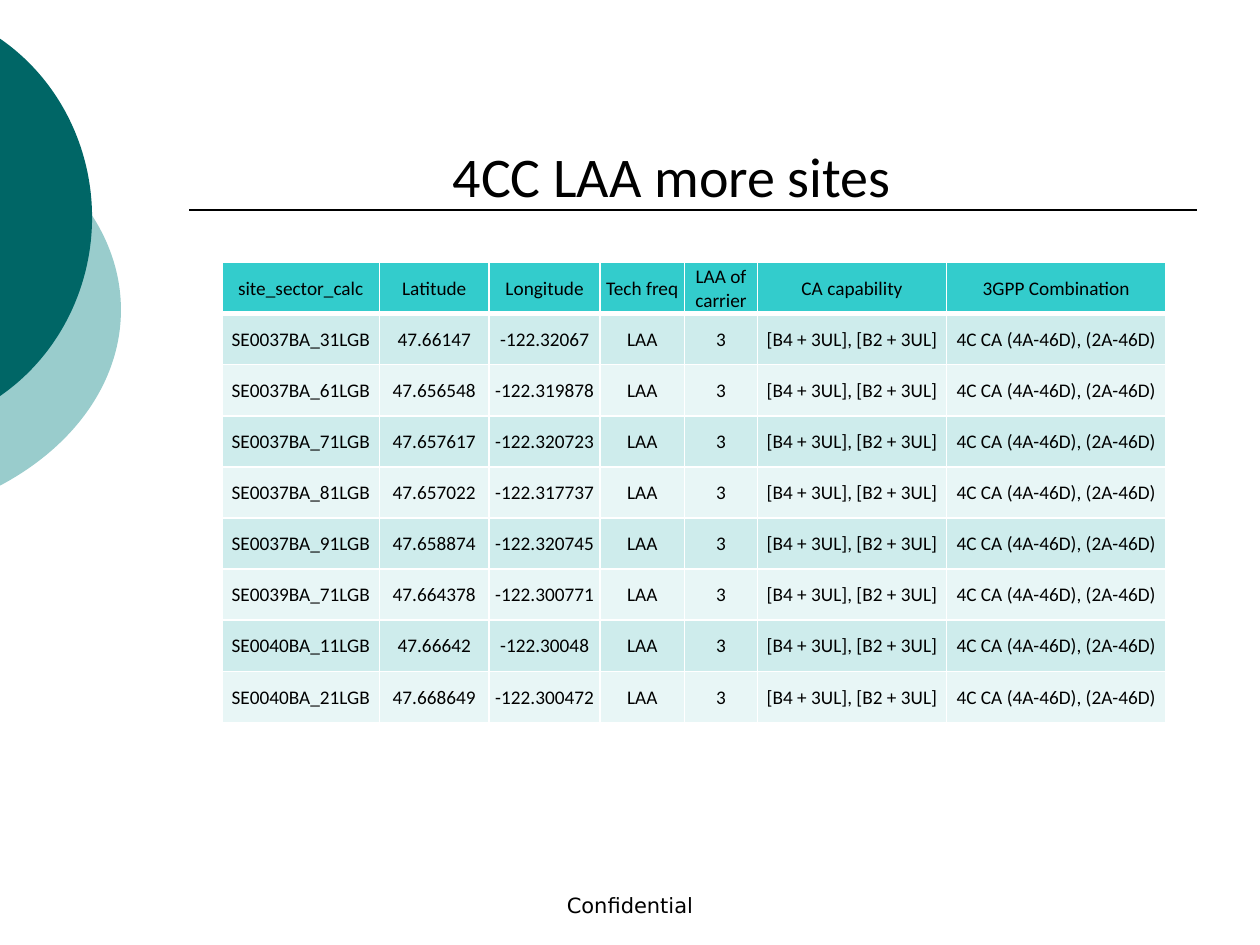
import pptx
import pptx.dml.color
import pptx.enum.shapes
import pptx.enum.text
import pptx.oxml
import pptx.oxml.ns
import pptx.util

Pt = pptx.util.Pt
RGBColor = pptx.dml.color.RGBColor
Anchor = pptx.enum.text.MSO_ANCHOR
Align = pptx.enum.text.PP_ALIGN

BLACK = RGBColor(0x00, 0x00, 0x00)
WHITE = RGBColor(0xFF, 0xFF, 0xFF)
DARK_TEAL = RGBColor(0x00, 0x66, 0x66)
PALE_TEAL = RGBColor(0x99, 0xCC, 0xCC)
HEADER_FILL = RGBColor(0x33, 0xCC, 0xCC)
BAND_FILLS = [RGBColor(0xCE, 0xEC, 0xEC), RGBColor(0xE8, 0xF6, 0xF6)]

TITLE_FONT = {"name": "Calibri", "size": Pt(32), "bold": False}
FOOTER_FONT = {"name": "DejaVu Sans", "size": Pt(12), "bold": False}
TABLE_FONT = {"name": "Calibri", "size": Pt(11), "bold": False}
BOX_FORMAT = {
    "word_wrap": True,
    "auto_size": pptx.enum.text.MSO_AUTO_SIZE.NONE,
    "vertical_anchor": Anchor.BOTTOM,
}
CELL_FORMAT = {
    "margin_left": Pt(0.7),
    "margin_right": Pt(0.7),
    "margin_top": Pt(0.7),
    "margin_bottom": Pt(0),
    "vertical_anchor": Anchor.MIDDLE,
}

COLUMN_WIDTHS = [89.8, 62.8, 63.4, 48.2, 41.8, 108, 125.3]
ROW_HEIGHT = 29.2
HEADERS = ["site_sector_calc", "Latitude", "Longitude", "Tech freq",
           "LAA of carrier", "CA capability", "3GPP Combination"]
SITES = [
    ("SE0037BA_31LGB", "47.66147", "-122.32067"),
    ("SE0037BA_61LGB", "47.656548", "-122.319878"),
    ("SE0037BA_71LGB", "47.657617", "-122.320723"),
    ("SE0037BA_81LGB", "47.657022", "-122.317737"),
    ("SE0037BA_91LGB", "47.658874", "-122.320745"),
    ("SE0039BA_71LGB", "47.664378", "-122.300771"),
    ("SE0040BA_11LGB", "47.66642", "-122.30048"),
    ("SE0040BA_21LGB", "47.668649", "-122.300472"),
]
SHARED_VALUES = ("LAA", "3", "[B4 + 3UL], [B2 + 3UL]", "4C CA (4A-46D), (2A-46D)")


def apply_format(target, values):
    for name, value in values.items():
        setattr(target, name, value)


def write_text(text_frame, text, font_format):
    text_frame.text = text
    paragraph = text_frame.paragraphs[0]
    paragraph.alignment = Align.CENTER
    font = paragraph.runs[0].font
    apply_format(font, font_format)
    font.color.rgb = BLACK


def fill_box(shape, position, text, font_format):
    apply_format(shape, dict(zip(("left", "top", "width", "height"), map(Pt, position))))
    apply_format(shape.text_frame, BOX_FORMAT)
    write_text(shape.text_frame, text, font_format)


def path_command(name, points, left, top):
    marks = "".join(f'<a:pt x="{Pt(x - left)}" y="{Pt(y - top)}"/>' for x, y in points)
    return pptx.oxml.parse_xml(
        f'<a:{name} {pptx.oxml.ns.nsdecls("a")}>{marks}</a:{name}>')


def add_disc_edge(slide, frame, upper, color):
    left, top, width, height = frame
    builder = slide.shapes.build_freeform(Pt(left), Pt(top))
    builder.add_line_segments([(Pt(left + width), Pt(top + height))], close=True)
    shape = builder.convert_to_shape()
    middle = upper[-1][1]
    lower = [(x, 2 * middle - y) for x, y in reversed(upper[:-1])]
    path = shape._element.spPr.find(".//" + pptx.oxml.ns.qn("a:path"))
    path[:] = [
        path_command("moveTo", upper[:1], left, top),
        path_command("cubicBezTo", upper[1:], left, top),
        path_command("cubicBezTo", lower, left, top),
        path_command("close", [], left, top),
    ]
    shape.shadow.inherit = False
    shape.fill.solid()
    shape.fill.fore_color.rgb = color
    shape.line.fill.background()


def add_rule(slide, left, right, top):
    connector = slide.shapes.add_connector(
        pptx.enum.shapes.MSO_CONNECTOR.STRAIGHT, Pt(left), Pt(top), Pt(right), Pt(top))
    connector.line.color.rgb = BLACK
    connector.line.width = Pt(1)
    connector._element.spPr.append(pptx.oxml.parse_xml(
        f'<a:effectLst {pptx.oxml.ns.nsdecls("a")}/>'))


def add_borders(cell, widths):
    properties = cell._tc.get_or_add_tcPr()
    for side, width in widths.items():
        properties.append(pptx.oxml.parse_xml(
            f'<a:ln{side} {pptx.oxml.ns.nsdecls("a")} w="{Pt(width)}">'
            f'<a:solidFill><a:srgbClr val="{WHITE}"/></a:solidFill></a:ln{side}>'))


def add_site_table(slide, left, top):
    rows = [HEADERS] + [site + SHARED_VALUES for site in SITES]
    table = slide.shapes.add_table(
        len(rows), len(HEADERS), Pt(left), Pt(top),
        Pt(sum(COLUMN_WIDTHS)), Pt(ROW_HEIGHT * len(rows))).table
    for column, width in zip(table.columns, COLUMN_WIDTHS):
        column.width = Pt(width)
    for row_index, values in enumerate(rows):
        table.rows[row_index].height = Pt(ROW_HEIGHT)
        fill = BAND_FILLS[(row_index - 1) % 2] if row_index else HEADER_FILL
        borders = {"L": 1, "R": 1,
                   "T": 3 if row_index == 1 else 1,
                   "B": 3 if row_index == 0 else 1}
        for column_index, value in enumerate(values):
            cell = table.cell(row_index, column_index)
            apply_format(cell, CELL_FORMAT)
            add_borders(cell, borders)
            cell.fill.solid()
            cell.fill.fore_color.rgb = fill
            write_text(cell.text_frame, value, TABLE_FONT)


def main():
    presentation = pptx.Presentation()
    presentation.slide_width = Pt(720)
    presentation.slide_height = Pt(540)
    slide = presentation.slides.add_slide(presentation.slide_layouts[5])

    add_disc_edge(slide, (-254.9, 54, 324, 246.2),
                  [(-0.7, 76.3), (43.2, 99.4), (69.1, 136.8), (69.1, 177.1)], PALE_TEAL)
    add_disc_edge(slide, (-190.8, 0, 243.4, 248.4),
                  [(-0.7, 21.6), (33.1, 44.6), (52.6, 83.5), (52.6, 124.2)], DARK_TEAL)
    add_rule(slide, 108, 684, 120)
    fill_box(slide.shapes.title, (102, 60, 564, 63), "4CC LAA more sites", TITLE_FONT)
    footer = slide.shapes.add_textbox(0, 0, 0, 0)
    fill_box(footer, (246, 492, 228, 36), "Confidential", FOOTER_FONT)
    add_site_table(slide, 127, 150)

    presentation.save("out.pptx")


if __name__ == "__main__":
    main()
